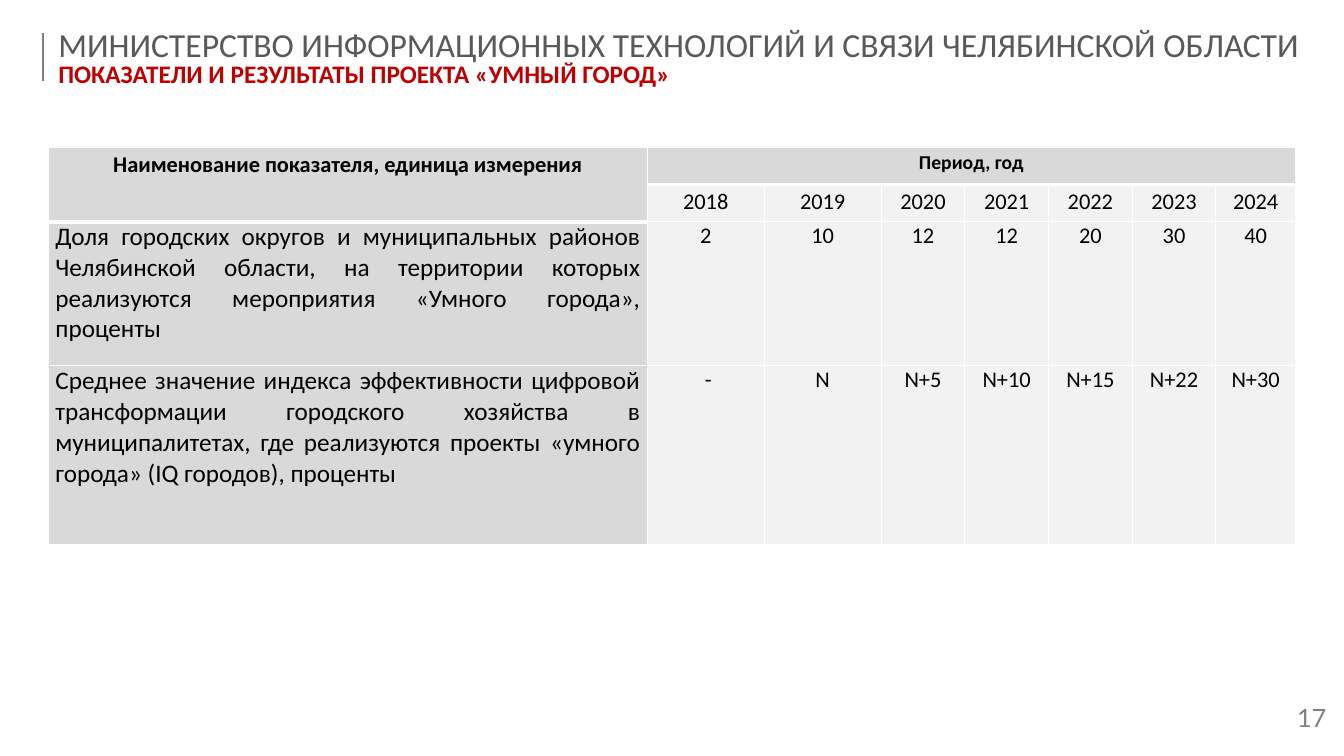
from pptx import Presentation
from pptx.dml.color import RGBColor
from pptx.enum.shapes import MSO_CONNECTOR
from pptx.enum.text import MSO_ANCHOR, PP_ALIGN as Align
from pptx.oxml.ns import qn
from pptx.util import Inches, Pt
from lxml.etree import SubElement, Element

MINISTRY = "МИНИСТЕРСТВО ИНФОРМАЦИОННЫХ ТЕХНОЛОГИЙ И СВЯЗИ ЧЕЛЯБИНСКОЙ ОБЛАСТИ"
TOPIC = "ПОКАЗАТЕЛИ И РЕЗУЛЬТАТЫ ПРОЕКТА «УМНЫЙ ГОРОД»"
PAGE_NUMBER = "17"
NAME_HEADING = "Наименование показателя, единица измерения"
PERIOD_HEADING = "Период, год"
YEARS = [str(year) for year in range(2018, 2025)]
INDICATORS = [
    ("Доля городских округов и муниципальных районов Челябинской области, "
     "на территории которых реализуются мероприятия «Умного города», проценты",
     ["2", "10", "12", "12", "20", "30", "40"]),
    ("Среднее значение индекса эффективности цифровой трансформации городского "
     "хозяйства в муниципалитетах, где реализуются проекты «умного города» "
     "(IQ городов), проценты",
     [" -", "N", "N+5", "N+10", "N+15", "N+22", "N+30"]),
]

COLUMNS = [5.94] + [1.16] * 2 + [0.83] * 4 + [0.79]
ROWS = [0.37, 0.37, 1.43, 1.77]
LEFT, TABLE_TOP = 0.48, 1.46

BLACK = RGBColor(0, 0, 0)
WHITE = RGBColor(0xFF, 0xFF, 0xFF)
GREY = RGBColor(0x80, 0x80, 0x80)
DARK_GREY = RGBColor(0x59, 0x59, 0x59)
RED = RGBColor(0xC0, 0, 0)
HEADER_FILL = RGBColor(0xD9, 0xD9, 0xD9)
VALUE_FILL = RGBColor(0xF2, 0xF2, 0xF2)


def write(para, text, size, color=BLACK, bold=False, font="Calibri",
          align=Align.LEFT, spacing=1.0):
    para.alignment = align
    para.line_spacing = spacing
    span = para.add_run()
    span.text = text
    span.font.size = Pt(size)
    span.font.name = font
    span.font.bold = bold
    span.font.color.rgb = color


def add_box(page, left, top, width, height):
    box = page.shapes.add_textbox(*map(Inches, (left, top, width, height)))
    frame = box.text_frame
    frame.word_wrap = True
    frame.vertical_anchor = MSO_ANCHOR.MIDDLE
    return frame


def draw_borders(cell, top, bottom):
    props = cell._tc.get_or_add_tcPr()
    widths = {"a:lnL": 1, "a:lnR": 1, "a:lnT": top, "a:lnB": bottom}
    for place, (side, width) in enumerate(widths.items()):
        line = Element(qn(side), w=str(Pt(width)))
        fill = SubElement(line, qn("a:solidFill"))
        SubElement(fill, qn("a:srgbClr"), val=str(WHITE))
        props.insert(place, line)


def heavy_below(row, column):
    return row == (1 if column == 0 else 0)


def add_indicators(page):
    frame = page.shapes.add_table(
        len(ROWS), len(COLUMNS), Inches(LEFT), Inches(TABLE_TOP),
        Inches(sum(COLUMNS)), Inches(sum(ROWS)))
    table = frame.table
    for column, width in zip(table.columns, COLUMNS):
        column.width = Inches(width)
    for row, height in zip(table.rows, ROWS):
        row.height = Inches(height)

    for r in range(len(ROWS)):
        for c in range(len(COLUMNS)):
            cell = table.cell(r, c)
            cell.margin_left = cell.margin_right = Inches(0.07)
            cell.margin_top = cell.margin_bottom = 0
            cell.fill.solid()
            cell.fill.fore_color.rgb = HEADER_FILL if r == 0 or c == 0 else VALUE_FILL
            draw_borders(cell, 3 if heavy_below(r - 1, c) else 1,
                         3 if heavy_below(r, c) else 1)
    table.cell(0, 0).merge(table.cell(1, 0))
    table.cell(0, 1).merge(table.cell(0, len(YEARS)))

    def put(row, column, text, size, **style):
        para = table.cell(row, column).text_frame.paragraphs[0]
        write(para, text, size, **{"align": Align.CENTER, **style})

    put(0, 0, NAME_HEADING, 16, bold=True, spacing=1.15)
    put(0, 1, PERIOD_HEADING, 14, bold=True, spacing=1.15)
    for c, year in enumerate(YEARS, 1):
        put(1, c, year, 16, spacing=1.15)
    for r, (name, values) in enumerate(INDICATORS, 2):
        put(r, 0, name, 18, align=Align.JUSTIFY)
        for c, value in enumerate(values, 1):
            put(r, c, value, 16)


def main():
    deck = Presentation()
    deck.slide_width, deck.slide_height = Inches(13.33), Inches(7.5)
    page = deck.slides.add_slide(deck.slide_layouts[6])

    rule = page.shapes.add_connector(
        MSO_CONNECTOR.STRAIGHT, *map(Inches, (0.43, 0.33, 0.43, 0.8)))
    rule.line.color.rgb = GREY
    rule.line.width = Pt(1.5)
    SubElement(rule._element.spPr, qn("a:effectLst"))

    number = add_box(page, 12.43, 6.9, 1.16, 0.5)
    write(number.paragraphs[0], PAGE_NUMBER, 18, GREY, font="Lato",
          align=Align.CENTER, spacing=0.8)

    title = add_box(page, LEFT, 0.26, 13.49, 0.67)
    write(title.paragraphs[0], MINISTRY, 24, DARK_GREY, spacing=0.8)
    write(title.add_paragraph(), TOPIC, 18, RED, bold=True, spacing=0.8)

    add_indicators(page)
    deck.save("out.pptx")


if __name__ == "__main__":
    main()
